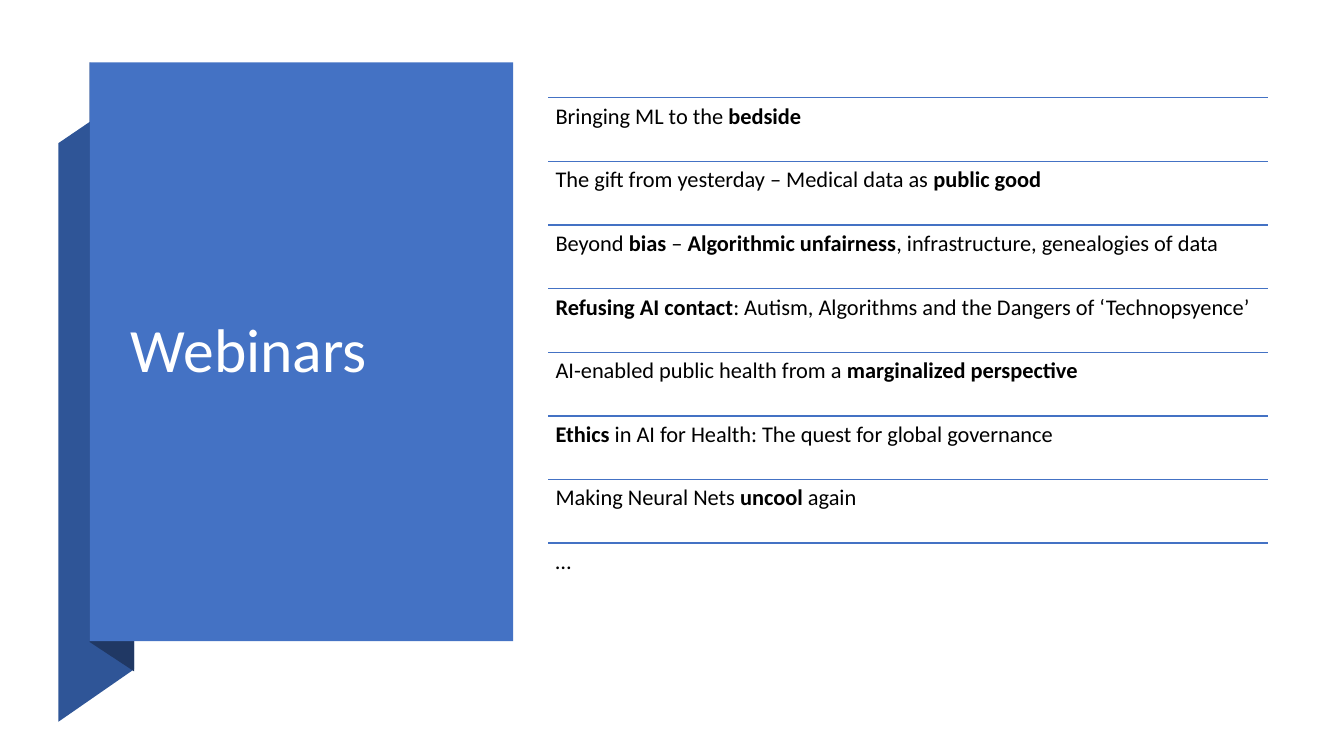
from dataclasses import dataclass

import pptx
import pptx.dml.color
import pptx.enum.shapes
import pptx.enum.text
import pptx.oxml
import pptx.oxml.ns
import pptx.util

Inches = pptx.util.Inches
FONT = "Calibri"
BLUE, MID_BLUE, NAVY = "4472C4", "2F5597", "203864"
LIST_LEFT, LIST_TOP, LIST_WIDTH, LIST_HEIGHT = 5.44, 0.97, 7.14, 5.05


@dataclass
class Run:
    text: str
    bold: bool = False


@dataclass
class Fold:
    points: list[tuple[float, float]]
    color: str


FOLDS = [
    Fold([(0.58, 7.16), (1.33, 6.64), (1.33, 0.91), (0.58, 1.42)], MID_BLUE),
    Fold([(0.89, 6.37), (1.33, 6.66), (1.33, 0.9), (0.89, 0.62)], NAVY),
]

WEBINARS = [
    [Run("Bringing ML to the "), Run("bedside", True)],
    [Run("The gift from yesterday – Medical data as "), Run("public good", True)],
    [Run("Beyond "), Run("bias", True), Run(" – "), Run("Algorithmic unfairness", True),
     Run(", infrastructure, genealogies of data")],
    [Run("Refusing AI contact", True),
     Run(": Autism, Algorithms and the Dangers of ‘Technopsyence’")],
    [Run("AI-enabled public health from a "), Run("marginalized perspective", True)],
    [Run("Ethics", True), Run(" in AI for Health: The quest for global governance")],
    [Run("Making Neural Nets "), Run("uncool", True), Run(" again")],
    [Run("…")],
]


def rgb(color: str) -> pptx.dml.color.RGBColor:
    return pptx.dml.color.RGBColor.from_string(color)


def paint(sp, color: str) -> None:
    sp.shadow.inherit = False
    sp.fill.solid()
    sp.fill.fore_color.rgb = rgb(color)
    sp.line.fill.background()


def add_fold(slide, fold: Fold) -> None:
    points = [(Inches(x), Inches(y)) for x, y in fold.points]
    builder = slide.shapes.build_freeform(*points[0])
    builder.add_line_segments(points[1:], close=True)
    paint(builder.convert_to_shape(), fold.color)


def add_rule(slide, left: float, top: float, width: float) -> None:
    line = slide.shapes.add_connector(
        pptx.enum.shapes.MSO_CONNECTOR.STRAIGHT,
        Inches(left), Inches(top), Inches(left + width), Inches(top))
    line.line.color.rgb = rgb(BLUE)
    line.line.width = pptx.util.Pt(1)
    sp_pr = line._element.find(pptx.oxml.ns.qn("p:spPr"))
    sp_pr.append(pptx.oxml.parse_xml(f"<a:effectLst {pptx.oxml.ns.nsdecls('a')}/>"))


def write_runs(sp, runs: list[Run], size: float, color: str) -> None:
    tf = sp.text_frame
    tf.word_wrap = True
    p = tf.paragraphs[0]
    p.line_spacing = 0.9
    for run in runs:
        r = p.add_run()
        r.text = run.text
        r.font.name = FONT
        r.font.size = pptx.util.Pt(size)
        r.font.bold = run.bold
        r.font.color.rgb = rgb(color)


def add_webinar(slide, runs: list[Run], top: float, height: float) -> None:
    add_rule(slide, LIST_LEFT, top, LIST_WIDTH)
    sp = slide.shapes.add_textbox(
        Inches(LIST_LEFT), Inches(top), Inches(LIST_WIDTH), Inches(height))
    tf = sp.text_frame
    tf.margin_left = tf.margin_right = tf.margin_top = tf.margin_bottom = Inches(0.07)
    write_runs(sp, runs, 16, "000000")


def main() -> None:
    prs = pptx.Presentation()
    prs.slide_width, prs.slide_height = Inches(13.33), Inches(7.5)
    slide = prs.slides.add_slide(prs.slide_layouts[6])

    # Folded ribbon behind the title panel
    for fold in FOLDS:
        add_fold(slide, fold)
    panel = slide.shapes.add_shape(
        pptx.enum.shapes.MSO_SHAPE.RECTANGLE,
        Inches(0.89), Inches(0.62), Inches(4.2), Inches(5.74))
    paint(panel, BLUE)

    # Title
    title = slide.shapes.add_textbox(Inches(1.2), Inches(0.97), Inches(3.53), Inches(5.06))
    title.text_frame.vertical_anchor = pptx.enum.text.MSO_ANCHOR.MIDDLE
    write_runs(title, [Run("Webinars")], 44, "FFFFFF")

    # Webinar list, evenly spaced
    pitch = LIST_HEIGHT / len(WEBINARS)
    for i, runs in enumerate(WEBINARS):
        add_webinar(slide, runs, LIST_TOP + i * pitch, pitch)

    prs.save("out.pptx")


if __name__ == "__main__":
    main()
